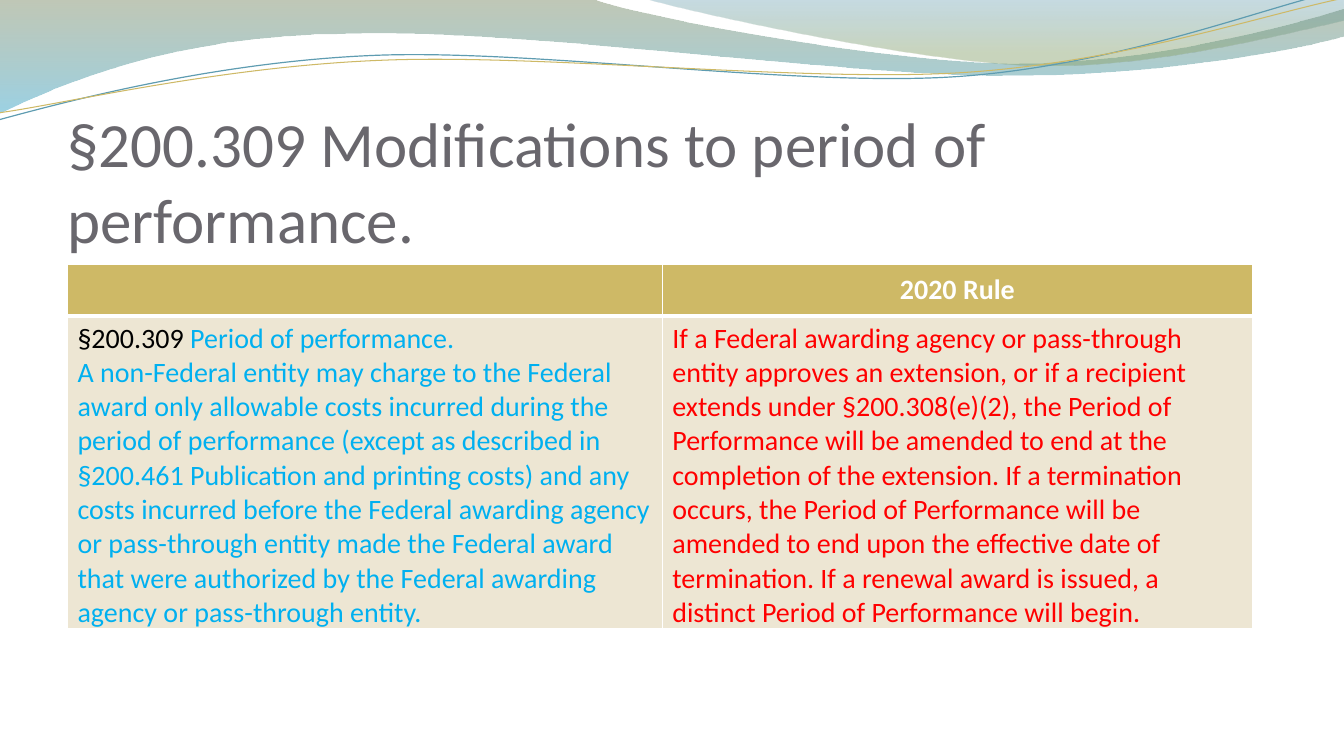
from lxml import etree
from pptx import Presentation
from pptx.dml.color import RGBColor
from pptx.enum import text
from pptx.oxml import ns
from pptx.util import Cm, Pt

FONT = "Calibri"
COLORS = {
    "olive": "74855E", "sky": "4AACCE", "teal": "45889F", "moss": "8AA36D",
    "blue_line": "5E9CB1", "gold": "CEB966", "sand": "EDE6D3", "title": "69676D",
    "white": "FFFFFF", "black": "000000", "blue": "00B0F0", "red": "FF0000",
}

# Outlines in cm: a pair is a corner, six numbers are a Bezier curve
WAVES = [
    # outline, then gradient stops as (position, colour, opacity in %)
    ([(0, -0.03), (14.91, -0.03),
      (16.1, 0.43, 22.48, 1.6, 25.68, 1.6), (28.91, 1.6, 32.46, 0.66, 33.86, 0.23),
      (33.91, 0.91),
      (33.3, 1.12, 29.46, 1.93, 25.25, 1.91), (21.06, 1.91, 12.93, 0.71, 8.71, 0.86),
      (4.37, 0.89, 1.55, 2.11, -0.03, 2.87)],
     [(0, "olive", 45), (1, "sky", 55)]),
    ([(16.23, -0.03),
      (17.25, 0.28, 23.09, 1.57, 26.04, 1.65), (28.98, 1.75, 32.56, 0.81, 33.86, 0.53),
      (33.86, 0)],
     [(0, "teal", 30), (0.8, "moss", 45)]),
]
STRANDS = [
    ([(-0.03, 3.02), (1.63, 2.57, 5.36, 1.57, 9.37, 1.4),
      (13.39, 1.22, 20.07, 2.21, 24.13, 1.93), (28.19, 1.65, 31.8, 0.2, 33.81, -0.25)],
     "blue_line", 0.85),
    ([(0, 2.84), (1.6, 2.62, 5.54, 1.68, 9.6, 1.52),
      (13.64, 1.35, 20.19, 2.08, 24.26, 1.83), (28.32, 1.57, 31.88, 0.36, 33.88, -0.05)],
     "gold", 0.75),
]

TITLE = "§200.309 Modifications to period of performance."
# Each cell is a list of paragraphs, each paragraph a list of (text, colour)
ROWS = [
    [[], [[("2020 Rule", "white")]]],
    [[[("§200.309 ", "black"), ("Period of performance.", "blue")],
      [("A non-Federal entity may charge to the Federal award only allowable costs "
        "incurred during the period of performance (except as described in §200.461 "
        "Publication and printing costs) and any costs incurred before the Federal "
        "awarding agency or pass-through entity made the Federal award that were "
        "authorized by the Federal awarding agency or pass-through entity.", "blue")]],
     [[("If a Federal awarding agency or pass-through entity approves an extension, or "
        "if a recipient extends under §200.308(e)(2), the Period of Performance will be "
        "amended to end at the completion of the extension. If a termination occurs, the "
        "Period of Performance will be amended to end upon the effective date of "
        "termination. If a renewal award is issued, a distinct Period of Performance "
        "will begin.", "red")]]],
]


def rgb(name):
    return RGBColor.from_string(COLORS[name])


def add_run(paragraph, words, color, size, bold=False):
    run = paragraph.add_run()
    run.text = words
    run.font.name, run.font.size, run.font.bold = FONT, Pt(size), bold
    run.font.color.rgb = rgb(color)


def add_outline(slide, outline, left, top, close):
    """Draw straight segments between the anchors, then bend those that are curves."""
    anchors = [(left + Cm(part[-2]), top + Cm(part[-1])) for part in outline]
    builder = slide.shapes.build_freeform(*anchors[0])
    builder.add_line_segments(anchors[1:], close=close)
    shape = builder.convert_to_shape()
    shape.shadow.inherit = False
    segments = list(shape._element.iter(ns.qn("a:lnTo")))
    for segment, part in zip(segments, outline[1:]):
        if len(part) == 2:
            continue
        curve = etree.Element(ns.qn("a:cubicBezTo"))
        for x, y in zip(part[::2], part[1::2]):
            etree.SubElement(curve, ns.qn("a:pt"), x=str(left + Cm(x) - shape.left),
                             y=str(top + Cm(y) - shape.top))
        segment.getparent().replace(segment, curve)
    return shape


def add_wave_band(slide, left, top):
    # Translucent waves
    for outline, stops in WAVES:
        wave = add_outline(slide, outline, left, top, close=True)
        wave.line.fill.background()
        wave.fill.gradient()
        wave.fill.gradient_angle = 270
        for stop, (position, color, opacity) in zip(wave.fill.gradient_stops, stops):
            stop.position = position
            stop.color.rgb = rgb(color)
        tints = wave.fill._xPr.iter(ns.qn("a:srgbClr"))
        for tint, (position, color, opacity) in zip(tints, stops):
            etree.SubElement(tint, ns.qn("a:alpha"), val=str(opacity * 1000))
    # Thin strands
    for outline, color, width in STRANDS:
        strand = add_outline(slide, outline, left, top, close=False)
        strand.fill.background()
        strand.line.color.rgb = rgb(color)
        strand.line.width = Pt(width)


def add_title(slide, left, top, width, height):
    frame = slide.shapes.add_textbox(left, top, width, height).text_frame
    frame.word_wrap = True
    frame.vertical_anchor = text.MSO_ANCHOR.BOTTOM
    frame.margin_left = frame.margin_right = frame.margin_bottom = 0
    add_run(frame.paragraphs[0], TITLE, "title", 45)


def add_borders(cell, widths):
    properties = cell._tc.get_or_add_tcPr()
    for index, (side, width) in enumerate(widths.items()):
        line = etree.Element(ns.qn("a:ln" + side), w=str(Pt(width)))
        fill = etree.SubElement(line, ns.qn("a:solidFill"))
        etree.SubElement(fill, ns.qn("a:srgbClr"), val=COLORS["white"])
        properties.insert(index, line)


def add_rule_table(slide, left, top, height, column_widths, row_heights):
    graphic_frame = slide.shapes.add_table(len(ROWS), len(column_widths), left, top,
                                           sum(column_widths), height)
    table = graphic_frame.table
    for column, width in zip(table.columns, column_widths):
        column.width = width
    for row, row_height in zip(table.rows, row_heights):
        row.height = row_height
    # The frame leaves room for the text to stretch the last row
    graphic_frame.height = height
    for row_index, row in enumerate(ROWS):
        header = row_index == 0
        for column_index, paragraphs in enumerate(row):
            cell = table.cell(row_index, column_index)
            cell.fill.solid()
            cell.fill.fore_color.rgb = rgb("gold" if header else "sand")
            add_borders(cell, {"L": 1, "R": 1, "T": 1 if header else 3,
                               "B": 3 if header else 1})
            if header:
                cell.vertical_anchor = text.MSO_ANCHOR.MIDDLE
            frame = cell.text_frame
            for index, runs in enumerate(paragraphs):
                paragraph = frame.add_paragraph() if index else frame.paragraphs[0]
                if header:
                    paragraph.alignment = text.PP_ALIGN.CENTER
                for words, color in runs:
                    add_run(paragraph, words, color, 20, bold=header)


def main():
    presentation = Presentation()
    presentation.slide_width, presentation.slide_height = Cm(33.87), Cm(19.05)
    slide = presentation.slides.add_slide(presentation.slide_layouts[6])
    slide.background.fill.solid()
    slide.background.fill.fore_color.rgb = rgb("white")
    margin = Cm(1.7)
    add_wave_band(slide, Cm(0), Cm(0))
    add_title(slide, margin, Cm(3.27), Cm(31.75), Cm(3.18))
    add_rule_table(slide, margin, Cm(6.65), Cm(9.19),
                   [Cm(14.99), Cm(14.88)], [Cm(1.32), Cm(7.26)])
    presentation.save("out.pptx")


if __name__ == "__main__":
    main()
